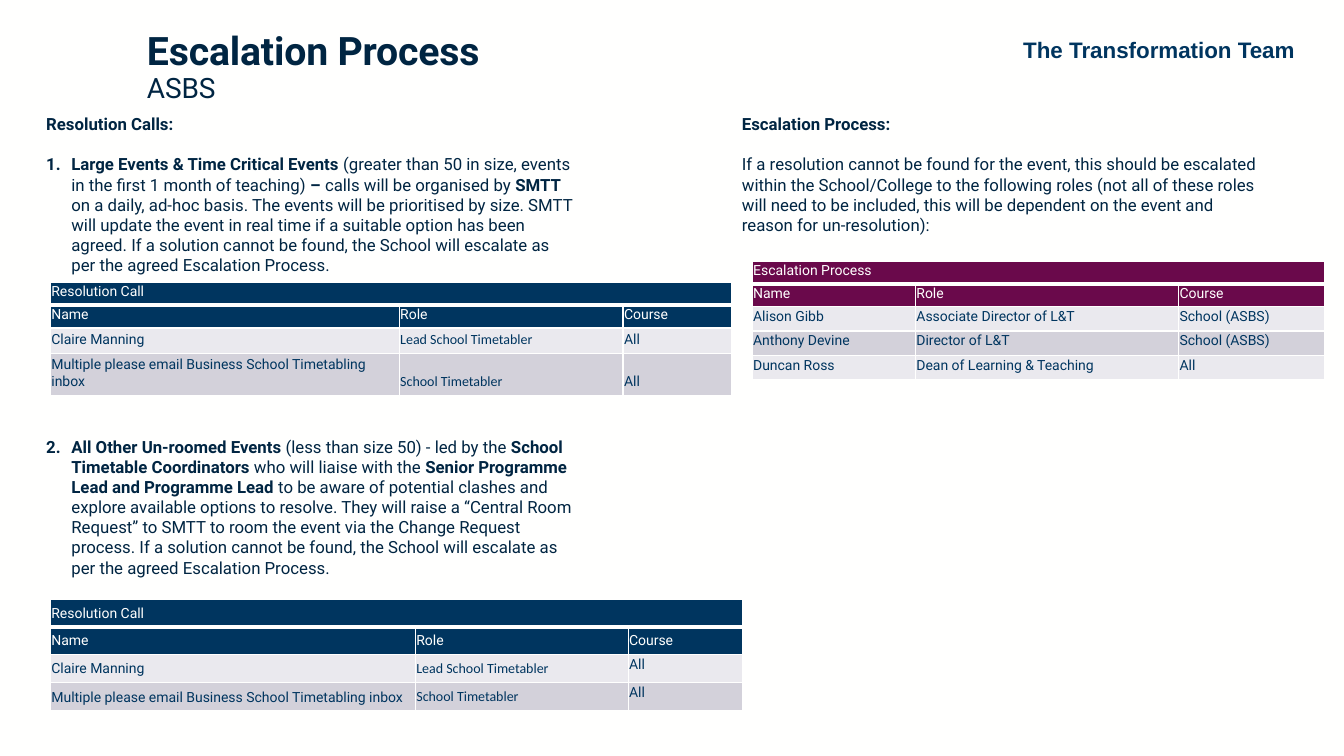
from itertools import cycle

from lxml.etree import SubElement
from pptx import Presentation
from pptx.dml.color import RGBColor
from pptx.enum.text import MSO_ANCHOR, MSO_AUTO_SIZE, PP_ALIGN
from pptx.oxml import parse_xml
from pptx.oxml.ns import nsdecls, qn
from pptx.util import Inches, Pt

PAPER = RGBColor(0xFF, 0xFF, 0xFE)
INK = RGBColor(0x00, 0x25, 0x42)
NAVY = RGBColor(0x00, 0x35, 0x5F)
PLUM = RGBColor(0x6A, 0x09, 0x4B)
BANDS = RGBColor(0xEA, 0xE9, 0xEE), RGBColor(0xD3, 0xD1, 0xDA)

GRID = Inches(0.1)  # one column or row of the page grid
LINE = 14.4  # height of a line of body text, in points


def write(para, text, font="Roboto", size=12, color=INK, bold=None, tracking=None):
    span = para.add_run()
    span.text = text
    span.font.name = font
    span.font.size = Pt(size)
    span.font.color.rgb = color
    span.font.bold = bold
    if tracking is not None:
        span.font._element.set("spc", str(tracking))
    return span


def edge_cell(cell, bottom=1):
    """Draw the four borders; widths are in points."""
    properties = cell._tc.get_or_add_tcPr()
    for index, side in enumerate("LRTB"):
        width = Pt(bottom if side == "B" else 1)
        properties.insert(index, parse_xml(
            f'<a:ln{side} {nsdecls("a")} w="{width}"><a:solidFill>'
            f'<a:srgbClr val="{PAPER}"/></a:solidFill></a:ln{side}>'))


class Page:
    """A slide whose lengths are counted in grid columns and rows."""

    def __init__(self, deck):
        self.slide = deck.slides.add_slide(deck.slide_layouts[6])
        self.slide.background.fill.solid()
        self.slide.background.fill.fore_color.rgb = PAPER

    def place(self, *cells):
        return [round(count * GRID) for count in cells]

    def text_box(self, *area, anchor=MSO_ANCHOR.TOP, grow=True):
        frame = self.slide.shapes.add_textbox(*self.place(*area)).text_frame
        frame.word_wrap = True
        frame.vertical_anchor = anchor
        frame.auto_size = MSO_AUTO_SIZE.SHAPE_TO_FIT_TEXT if grow else MSO_AUTO_SIZE.NONE
        return frame

    def body(self, heading, paragraphs, *area, numbered=False, gap=1):
        """Add a heading and paragraphs whose spans alternate bold and regular."""
        frame = self.text_box(*area)
        write(frame.paragraphs[0], heading, bold=True)
        for index, spans in enumerate(paragraphs):
            para = frame.add_paragraph()
            para.space_before = Pt(LINE * (gap if index else 1))
            if numbered:
                properties = para._p.get_or_add_pPr()
                properties.set("marL", str(Inches(0.25)))
                properties.set("indent", str(-Inches(0.25)))
                SubElement(properties, qn("a:buFont"), typeface="+mj-lt")
                SubElement(properties, qn("a:buAutoNum"), type="arabicPeriod")
            for text, bold in zip(spans, cycle((numbered, False))):
                write(para, text, bold=bold)

    def table(self, title, people, left, top, columns, rows, accent=NAVY,
              role_font="Calibri", anchors=(MSO_ANCHOR.BOTTOM,) * 3, loose_from=2):
        """Add a titled table; body rows from loose_from on have looser spacing."""
        area = self.place(left, top, sum(columns), sum(rows))
        grid = self.slide.shapes.add_table(len(rows), len(columns), *area).table
        grid.first_row = grid.horz_banding = False
        for column, width in zip(grid.columns, self.place(*columns)):
            column.width = width
        for row, height in zip(grid.rows, self.place(*rows)):
            row.height = height
        grid.cell(0, 0).merge(grid.cell(0, 2))

        content = [(title, "", ""), ("Name", "Role", "Course"), *people]
        for r, texts in enumerate(content):
            header = r < 2
            for c, text in enumerate(texts):
                cell = grid.cell(r, c)
                cell.margin_left = cell.margin_right = cell.margin_top = Inches(0.01)
                cell.margin_bottom = Inches(0.05)
                cell.vertical_anchor = MSO_ANCHOR.BOTTOM if header else anchors[c]
                cell.fill.solid()
                cell.fill.fore_color.rgb = accent if header else BANDS[r % 2]
                edge_cell(cell, bottom=1 if r else 3)
                if not text:
                    continue
                para = cell.text_frame.paragraphs[0]
                if r >= loose_from:
                    para.line_spacing = 1.07
                    para.space_after = Pt(8)
                write(para, text, size=10, color=PAPER if header else NAVY,
                      font=role_font if c == 1 and not header else "Roboto")


def main():
    deck = Presentation()
    deck.slide_width, deck.slide_height = Inches(13.33), Inches(7.5)
    page = Page(deck)

    team = page.text_box(99.5, 3.1, 30.9, 3.7).paragraphs[0]
    team.alignment = PP_ALIGN.CENTER
    write(team, "The Transformation Team", font="Arial", size=16, color=NAVY, bold=True)

    title = page.text_box(13.6, 0.9, 42.3, 11.7, anchor=MSO_ANCHOR.MIDDLE,
                          grow=False).paragraphs[0]
    title.line_spacing = 0.9
    write(title, "Escalation Process", size=28, bold=True, tracking=-10)
    title.add_line_break()
    write(title, "ASBS", size=20, bold=False, tracking=-10)

    timetablers = [
        ("Claire Manning", "Lead School Timetabler", "All"),
        ("Multiple please email Business School Timetabling inbox",
         "School Timetabler", "All"),
    ]
    page.table("Resolution Call", timetablers, 5, 59.5, (36.2, 21.1, 11.4),
               (2.7, 2.7, 2.8, 2.8),
               anchors=(MSO_ANCHOR.BOTTOM, MSO_ANCHOR.BOTTOM, MSO_ANCHOR.TOP))

    directors = [
        ("Alison Gibb", "Associate Director of L&T", "School (ASBS)"),
        ("Anthony Devine", "Director of L&T", "School (ASBS)"),
        ("Duncan Ross", "Dean of Learning & Teaching", "All"),
    ]
    page.table("Escalation Process", directors, 74.6, 25.9, (16.2, 26.1, 14.5),
               (2.2, 2.2, 2.4, 2.4, 2.4), accent=PLUM, role_font="Roboto",
               anchors=(MSO_ANCHOR.MIDDLE,) * 3, loose_from=4)

    page.body("Escalation Process:", [(
        "If a resolution cannot be found for the event, this should be escalated "
        "within the School/College to the following roles (not all of these roles "
        "will need to be included, this will be dependent on the event and reason "
        "for un-resolution):",)], 72.6, 10.8, 54.2, 15.1)

    page.body("Resolution Calls:", [
        ("Large Events & Time Critical Events ",
         "(greater than 50 in size, events in the first 1 month of teaching) ",
         "– ", "calls will be organised by ", "SMTT ",
         "on a daily, ad-hoc basis. The events will be prioritised by size. SMTT "
         "will update the event in real time if a suitable option has been agreed. "
         "If a solution cannot be found, the School will escalate as per the agreed "
         "Escalation Process."),
        ("All Other Un-roomed Events ", "(less than size 50) - led by the ",
         "School Timetable Coordinators ", "who will liaise with the ",
         "Senior Programme Lead and Programme Lead ",
         "to be aware of potential clashes and explore available options to resolve. "
         "They will raise a “Central Room Request” to SMTT to room the event via the "
         "Change Request process. If a solution cannot be found, the School will "
         "escalate as per the agreed Escalation Process."),
    ], 3.6, 10.8, 54.7, 47.5, numbered=True, gap=8)

    page.table("Resolution Call", timetablers, 5, 28, (34.6, 22.2, 10.8),
               (2, 2, 2.5, 2.5))
    deck.save("out.pptx")


if __name__ == "__main__":
    main()
